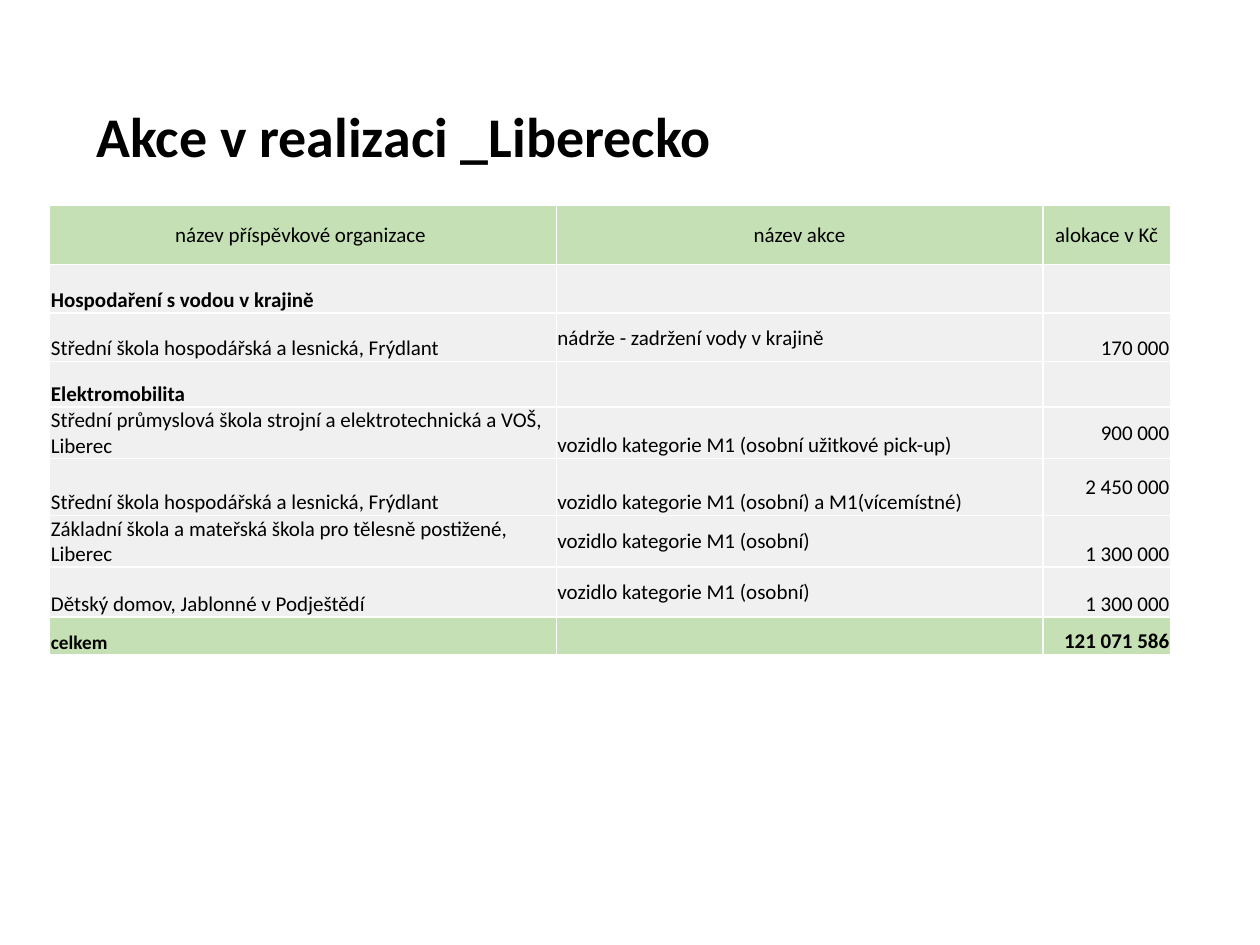
from dataclasses import dataclass

from lxml import etree
from pptx import Presentation
from pptx.dml.color import RGBColor
from pptx.enum.text import MSO_ANCHOR, MSO_AUTO_SIZE, PP_ALIGN
from pptx.oxml.ns import qn
from pptx.util import Pt

LEFT, CENTER, RIGHT = PP_ALIGN.LEFT, PP_ALIGN.CENTER, PP_ALIGN.RIGHT
ANCHORS = {"m": MSO_ANCHOR.MIDDLE, "b": MSO_ANCHOR.BOTTOM}


@dataclass(frozen=True)
class Theme:
    font: str = "Calibri"
    text: RGBColor = RGBColor(0, 0, 0)
    accent: RGBColor = RGBColor(0xC5, 0xE0, 0xB4)
    body: RGBColor = RGBColor(0xF0, 0xF0, 0xF0)
    border: str = "FFFFFF"
    title_size: float = 32
    cell_size: float = 12
    total_size: float = 11


THEME = Theme()
COLUMN_WIDTHS = (289.5, 278, 73)
COLUMN_ALIGNS = (LEFT, LEFT, RIGHT)

# Row kind, height, anchor of each cell, cell texts
ROWS = [
    ("header", 34, "mmm", ("název příspěvkové organizace ", "název akce", "alokace v Kč")),
    ("section", 28, "bbb", ("Hospodaření s vodou v krajině", "", "")),
    ("item", 27.5, "bmb", ("Střední škola hospodářská a lesnická, Frýdlant",
                           "nádrže - zadržení vody v krajině", "170 000")),
    ("section", 26, "bbb", ("Elektromobilita", "", "")),
    ("item", 22.5, "mbm", ("Střední průmyslová škola strojní a elektrotechnická a VOŠ, Liberec",
                           "vozidlo kategorie M1 (osobní užitkové pick-up)", "900 000")),
    ("item", 32.5, "bbm", ("Střední škola hospodářská a lesnická, Frýdlant",
                           "vozidlo kategorie M1 (osobní) a M1(vícemístné)", "2 450 000")),
    ("item", 24.5, "bmb", ("Základní škola a mateřská škola pro tělesně postižené, Liberec",
                           "vozidlo kategorie M1 (osobní)", "1 300 000")),
    ("item", 28.5, "bmb", ("Dětský domov, Jablonné v Podještědí",
                           "vozidlo kategorie M1 (osobní)", "1 300 000")),
    ("total", 21.5, "bbb", ("celkem", "", "121 071 586")),
]


def style_paragraph(paragraph, size, bold, align=LEFT):
    paragraph.alignment = align
    for run in paragraph.runs:
        run.font.name = THEME.font
        run.font.size = Pt(size)
        run.font.bold = bold
        run.font.color.rgb = THEME.text
    if not paragraph.runs:
        # Keeps an empty cell from stretching its row
        etree.SubElement(paragraph._p, qn("a:endParaRPr"), sz=str(int(size * 100)))


def add_borders(cell):
    properties = cell._tc.get_or_add_tcPr()
    for side in ("L", "R", "T", "B"):
        line = etree.SubElement(properties, qn(f"a:ln{side}"), w=str(Pt(1)))
        fill = etree.SubElement(line, qn("a:solidFill"))
        etree.SubElement(fill, qn("a:srgbClr"), val=THEME.border)


def add_title(slide, left, top, width, height):
    frame = slide.shapes.add_textbox(Pt(left), Pt(top), Pt(width), Pt(height)).text_frame
    frame.word_wrap = True
    frame.auto_size = MSO_AUTO_SIZE.SHAPE_TO_FIT_TEXT
    frame.text = "Akce v realizaci _Liberecko"
    style_paragraph(frame.paragraphs[0], THEME.title_size, True)


def fill_cell(cell, text, kind, anchor, align, size):
    cell.margin_left = cell.margin_right = cell.margin_top = Pt(0.7)
    cell.margin_bottom = 0
    cell.vertical_anchor = ANCHORS[anchor]
    cell.text_frame.text = text
    style_paragraph(cell.text_frame.paragraphs[0], size, kind in ("section", "total"), align)
    add_borders(cell)
    cell.fill.solid()
    cell.fill.fore_color.rgb = THEME.accent if kind in ("header", "total") else THEME.body


def add_allocation_table(slide, left, top):
    height = sum(row[1] for row in ROWS)
    table = slide.shapes.add_table(len(ROWS), len(COLUMN_WIDTHS), Pt(left), Pt(top),
                                   Pt(sum(COLUMN_WIDTHS)), Pt(height)).table
    table.first_row = table.horz_banding = False
    for column, width in zip(table.columns, COLUMN_WIDTHS):
        column.width = Pt(width)
    for row, (kind, row_height, anchors, texts) in zip(table.rows, ROWS):
        row.height = Pt(row_height)
        for index, cell in enumerate(row.cells):
            align = CENTER if kind == "header" else COLUMN_ALIGNS[index]
            size = THEME.total_size if kind == "total" and index == 0 else THEME.cell_size
            fill_cell(cell, texts[index], kind, anchors[index], align, size)


def main():
    deck = Presentation()
    deck.slide_width, deck.slide_height = Pt(720), Pt(540)
    slide = deck.slides.add_slide(deck.slide_layouts[6])
    add_title(slide, 48, 54.5, 601, 46)
    add_allocation_table(slide, 28.4, 117)
    deck.save("out.pptx")


if __name__ == "__main__":
    main()
